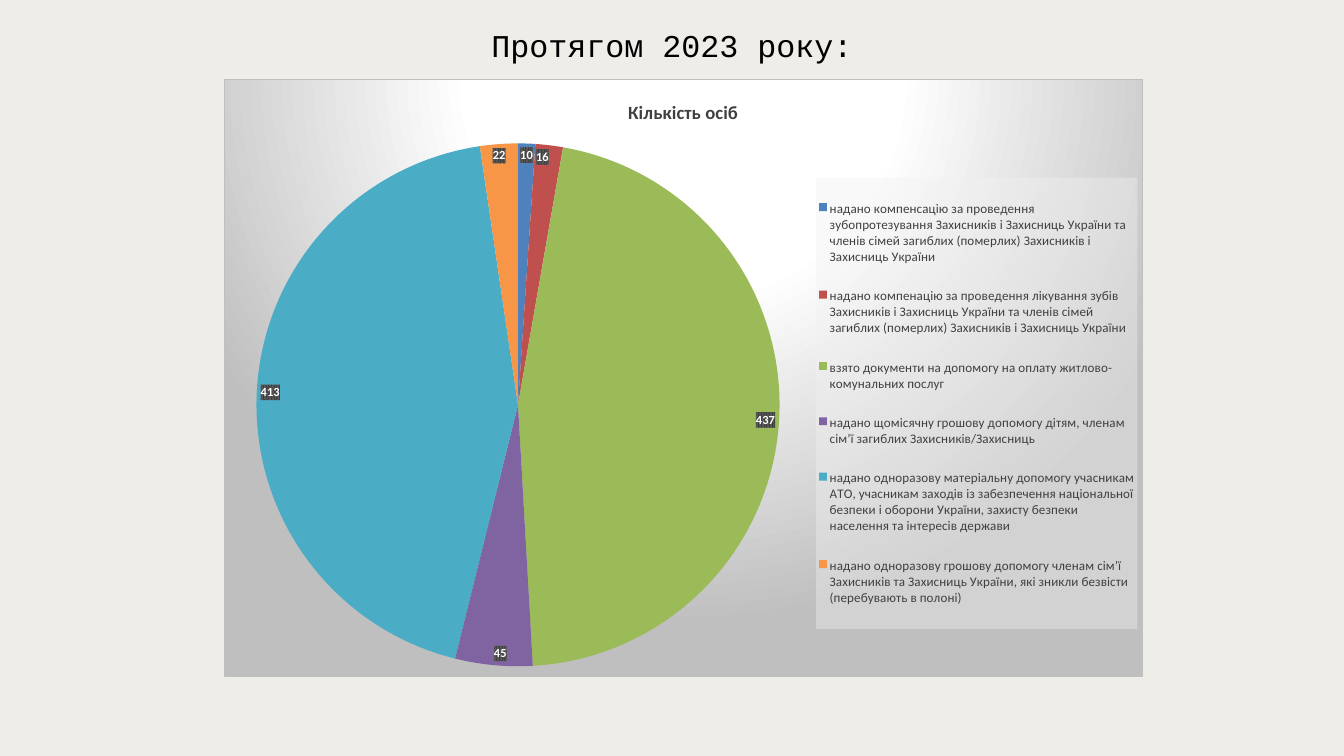
import pptx
import pptx.chart.data
import pptx.dml.color
import pptx.enum.chart
import pptx.enum.text
import pptx.oxml
import pptx.oxml.ns
import pptx.util

Pt = pptx.util.Pt
NS = " ".join(pptx.oxml.ns.nsdecls(p) for p in ("a", "c"))

HUES = {
    "page": "EFEDE7", "ink": "000000", "text": "404040", "white": "FFFFFF",
    "edge": "BFBFBF", "legend": "F2F2F2", "label": "595959",
}
SLICES = [
    ("надано компенсацію за проведення зубопротезування Захисників і Захисниць "
     "України та членів сімей загиблих (померлих) Захисників і Захисниць України",
     10, "4F81BD"),
    ("надано компенацію за проведення лікування зубів Захисників і Захисниць "
     "України та членів сімей загиблих (померлих) Захисників і Захисниць України",
     16, "C0504D"),
    ("взято документи на допомогу на оплату житлово-комунальних послуг",
     437, "9BBB59"),
    ("надано щомісячну грошову допомогу дітям, членам сім’ї загиблих "
     "Захисників/Захисниць", 45, "8064A2"),
    ("надано одноразову матеріальну допомогу учасникам АТО, учасникам заходів "
     "із забезпечення національної безпеки і оборони України, захисту безпеки "
     "населення та інтересів держави", 413, "4BACC6"),
    ("надано одноразову грошову допомогу членам сім’ї Захисників та Захисниць "
     "України, які зникли безвісти (перебувають в полоні)", 22, "F79646"),
]


def color(hue):
    return pptx.dml.color.RGBColor.from_string(hue)


def node(tag, body):
    return pptx.oxml.parse_xml(f"<c:{tag} {NS}>{body}</c:{tag}>")


def tint(hue, alpha=100):
    return f'<a:srgbClr val="{hue}"><a:alpha val="{alpha * 1000}"/></a:srgbClr>'


def place(left, top, width, height, inner=False):
    """Manual layout, in fractions of the chart."""
    goal = '<c:layoutTarget val="inner"/>' if inner else ""
    modes = '<c:xMode val="edge"/><c:yMode val="edge"/>'
    sides = "".join(f'<c:{k} val="{v}"/>' for k, v in
                    zip("xywh", (left, top, width, height)))
    return node("layout", f"<c:manualLayout>{goal}{modes}{sides}</c:manualLayout>")


class Deck:
    fonts = {
        "head": {"name": "Courier New", "size": Pt(34), "hue": "ink"},
        "base": {"name": "Calibri", "size": Pt(10), "hue": "ink"},
        "title": {"name": "Calibri", "size": Pt(20), "bold": True, "hue": "text"},
        "legend": {"name": "Calibri", "size": Pt(14), "hue": "text"},
        "label": {"name": "Calibri", "size": Pt(13.3), "bold": True, "hue": "white"},
    }

    def __init__(self, show):
        self.slide = show.slides.add_slide(show.slide_layouts[6])
        fill = self.slide.background.fill
        fill.solid()
        fill.fore_color.rgb = color(HUES["page"])

    def style(self, font, kind):
        for key, value in self.fonts[kind].items():
            if key == "hue":
                font.color.rgb = color(HUES[value])
            else:
                setattr(font, key, value)

    def text(self, words, box):
        frame = self.slide.shapes.add_textbox(*map(Pt, box)).text_frame
        frame.word_wrap = True
        for side in ("left", "top", "right", "bottom"):
            setattr(frame, f"margin_{side}", 0)
        line = frame.paragraphs[0]
        line.text = words
        line.alignment = pptx.enum.text.PP_ALIGN.CENTER
        self.style(line.font, "head")

    def pie(self, title, slices, box):
        data = pptx.chart.data.CategoryChartData()
        data.categories = [name for name, _, _ in slices]
        data.add_series("Series 1", [count for _, count, _ in slices])
        chart = self.slide.shapes.add_chart(
            pptx.enum.chart.XL_CHART_TYPE.PIE, *map(Pt, box), data).chart
        self.style(chart.font, "base")
        chart.has_title = True
        chart.chart_title.text_frame.text = title
        self.style(chart.chart_title.text_frame.paragraphs[0].font, "title")
        chart.chart_title.include_in_layout = False
        plot = chart.plots[0]
        plot.vary_by_categories = True
        for at, (_, _, hue) in enumerate(slices):
            fill = plot.series[0].points[at].format.fill
            fill.solid()
            fill.fore_color.rgb = color(hue)
        self.frame(chart)
        self.labels(plot.series[0].data_labels)
        self.legend(chart)

    def frame(self, chart):
        """Radial backdrop, thin border and fixed plot area."""
        stops = "".join(f'<a:gs pos="{at * 1000}">{tint(HUES[hue])}</a:gs>'
                        for at, hue in ((0, "white"), (39, "white"), (100, "edge")))
        root = chart.element if hasattr(chart, "element") else chart._chartSpace
        body = root.find(pptx.oxml.ns.qn("c:chart"))
        body.addnext(node("spPr", (
            f'<a:gradFill><a:gsLst>{stops}</a:gsLst><a:path path="circle">'
            '<a:fillToRect l="50000" t="-80000" r="50000" b="180000"/></a:path>'
            f'</a:gradFill><a:ln w="{Pt(0.75)}"><a:solidFill>{tint(HUES["edge"])}'
            '</a:solidFill></a:ln>')))
        area = body.find(pptx.oxml.ns.qn("c:plotArea"))
        for old in area.findall(pptx.oxml.ns.qn("c:layout")):
            area.remove(old)
        area.insert(0, place(0.035, 0.105, 0.57, 0.88, inner=True))

    def labels(self, labels):
        self.style(labels.font, "label")
        labels.show_value = True
        labels.position = pptx.enum.chart.XL_LABEL_POSITION.INSIDE_END
        labels._element.find(pptx.oxml.ns.qn("c:txPr")).addprevious(node("spPr", (
            f'<a:pattFill prst="pct75"><a:fgClr>{tint(HUES["text"])}</a:fgClr>'
            f'<a:bgClr>{tint(HUES["label"])}</a:bgClr></a:pattFill>')))

    def legend(self, chart):
        chart.has_legend = True
        legend = chart.legend
        legend.position = pptx.enum.chart.XL_LEGEND_POSITION.RIGHT
        legend.include_in_layout = False
        self.style(legend.font, "legend")
        over = legend._element.find(pptx.oxml.ns.qn("c:overlay"))
        for old in legend._element.findall(pptx.oxml.ns.qn("c:layout")):
            legend._element.remove(old)
        over.addprevious(place(0.645, 0.164, 0.35, 0.757))
        over.addnext(node("spPr", f'<a:solidFill>{tint(HUES["legend"], 39)}</a:solidFill>'))


def main():
    show = pptx.Presentation()
    show.slide_width, show.slide_height = Pt(1440), Pt(810)
    deck = Deck(show)
    deck.text("Протягом 2023 року:", (99.4, 28, 1241.3, 41))
    deck.pie("Кількість осіб", SLICES, (240, 85, 984, 640))
    show.save("out.pptx")


if __name__ == "__main__":
    main()
